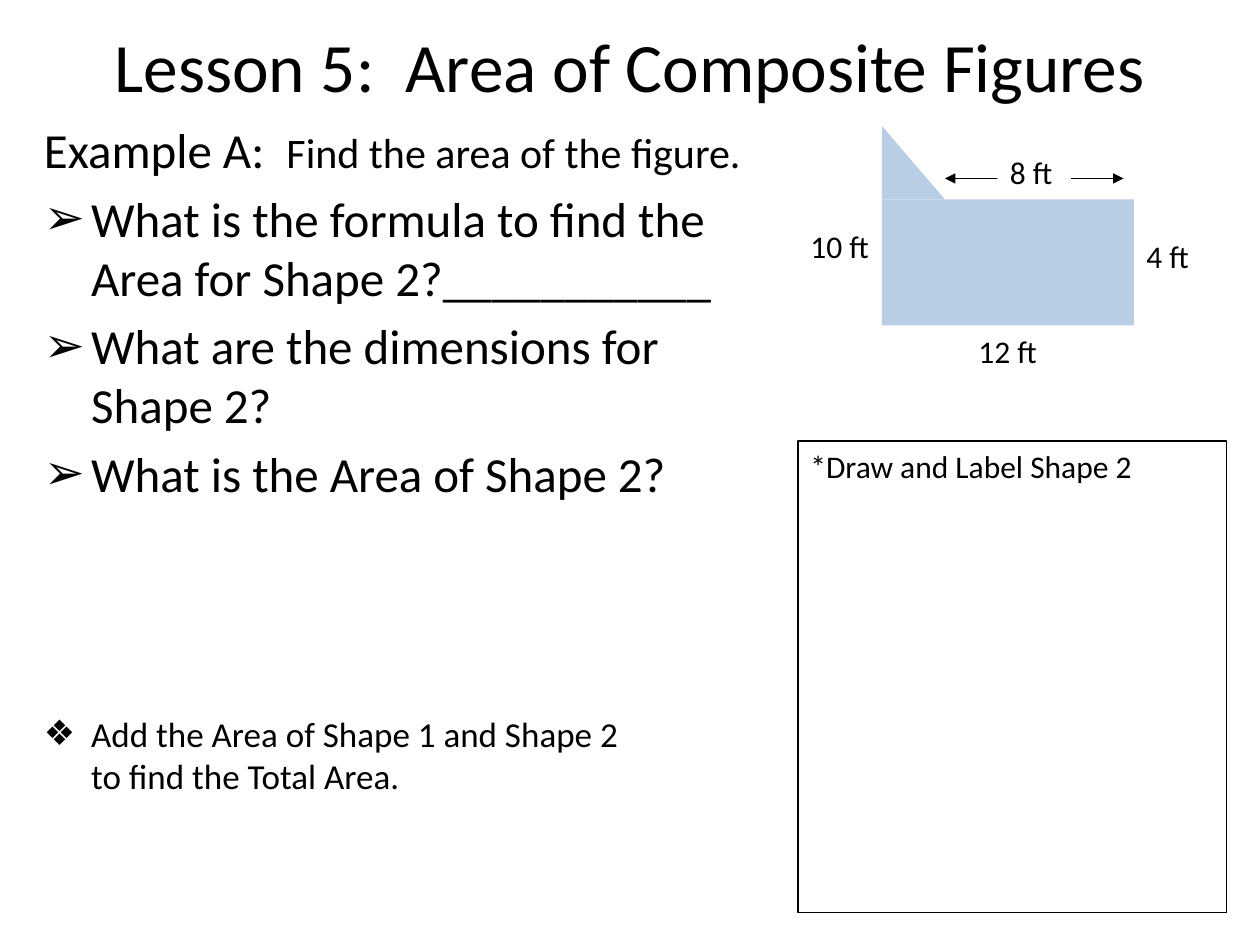
from pptx import Presentation
from pptx.dml.color import RGBColor
from pptx.enum.shapes import MSO_CONNECTOR, MSO_SHAPE
from pptx.enum.text import MSO_ANCHOR, PP_ALIGN
from pptx.oxml.ns import qn
from pptx.util import Pt
from lxml import etree


def color(value):
    return RGBColor.from_string(value)


def add_run(p, text, size):
    r = p.add_run()
    r.text = text
    for name, value in {"name": "Calibri", "size": Pt(size)}.items():
        setattr(r.font, name, value)
    r.font.color.rgb = color("000000")


prs = Presentation()
prs.slide_width, prs.slide_height = Pt(720), Pt(540)
s = prs.slides.add_slide(prs.slide_layouts[6])

# Title
tf = s.shapes.add_textbox(Pt(36), Pt(12), Pt(648), Pt(50.4)).text_frame
for name, value in {"word_wrap": True, "vertical_anchor": MSO_ANCHOR.MIDDLE}.items():
    setattr(tf, name, value)
p = tf.paragraphs[0]
p.alignment = PP_ALIGN.CENTER
add_run(p, "Lesson 5:  Area of Composite Figures", 39.6)

# Example and questions
tf = s.shapes.add_textbox(Pt(18), Pt(64.8), Pt(420), Pt(469.4)).text_frame
tf.word_wrap = True
p = tf.paragraphs[0]
p.space_before = Pt(5.6)
add_run(p, "Example A:  ", 28)
add_run(p, "Find the area of the figure.", 24)

# Bullet, lines, size, space before
bullets = [
    ("➢", ["What is the formula to find the Area for Shape 2?___________"], 28, 5.6),
    ("➢", ["What are the dimensions for Shape 2?"], 28, 5.6),
    ("➢", ["What is the Area of Shape 2?"], 28, 5.6),
    ("❖", ["Add the Area of Shape 1 and Shape 2", "to find the Total Area."], 20, 120.5),
]
for char, lines, size, before in bullets:
    p = tf.add_paragraph()
    p.space_before = Pt(before)
    for i, line in enumerate(lines):
        if i:
            p.add_line_break()
        add_run(p, line, size)
    pPr = p._p.get_or_add_pPr()
    pPr.set("marL", str(Pt(27)))
    pPr.set("indent", str(-Pt(27)))
    etree.SubElement(pPr, qn("a:buFont")).set("typeface", "Arial")
    etree.SubElement(pPr, qn("a:buChar")).set("char", char)

# Drawing box, composite figure and the backing of the top label
shapes = [
    (MSO_SHAPE.RECTANGLE, (456, 252, 244.8, 269.3), None, "000000"),
    (MSO_SHAPE.RECTANGLE, (504, 114, 144, 72), "B9CDE5", None),
    (MSO_SHAPE.ISOSCELES_TRIANGLE, (504, 72, 36, 42), "B9CDE5", None),
]
for kind, box, fill, line in shapes:
    sp = s.shapes.add_shape(kind, *map(Pt, box))
    sp.shadow.inherit = False
    if fill:
        sp.fill.solid()
        sp.fill.fore_color.rgb = color(fill)
    else:
        sp.fill.background()
    if line:
        sp.line.color.rgb = color(line)
        sp.line.width = Pt(0.75)
    else:
        sp.line.fill.background()
    if kind == MSO_SHAPE.ISOSCELES_TRIANGLE:
        sp.adjustments[0] = 0

# Double-headed dimension line
cxn = s.shapes.add_connector(MSO_CONNECTOR.STRAIGHT, Pt(540), Pt(102), Pt(642), Pt(102))
cxn.line.color.rgb = color("000000")
cxn.line.width = Pt(0.75)
ln = cxn.line._get_or_add_ln()
for end in ("a:headEnd", "a:tailEnd"):
    etree.SubElement(ln, qn(end)).set("type", "triangle")
etree.SubElement(cxn._element.spPr, qn("a:effectLst"))

# Labels: text, left, top, width, fill
labels = [
    ("*Draw and Label Shape 2", 456, 252, 244.8, None),
    ("10 ft", 456, 126, 60, None),
    ("12 ft", 552, 186, 54, None),
    ("4 ft", 648, 132, 54, None),
    ("8 ft", 570, 84, 42, "FFFFFF"),
]
for text, left, top, width, fill in labels:
    sp = s.shapes.add_textbox(Pt(left), Pt(top), Pt(width), Pt(28.8))
    if fill:
        sp.fill.solid()
        sp.fill.fore_color.rgb = color(fill)
    sp.text_frame.word_wrap = True
    add_run(sp.text_frame.paragraphs[0], text, 18)

prs.save("out.pptx")
